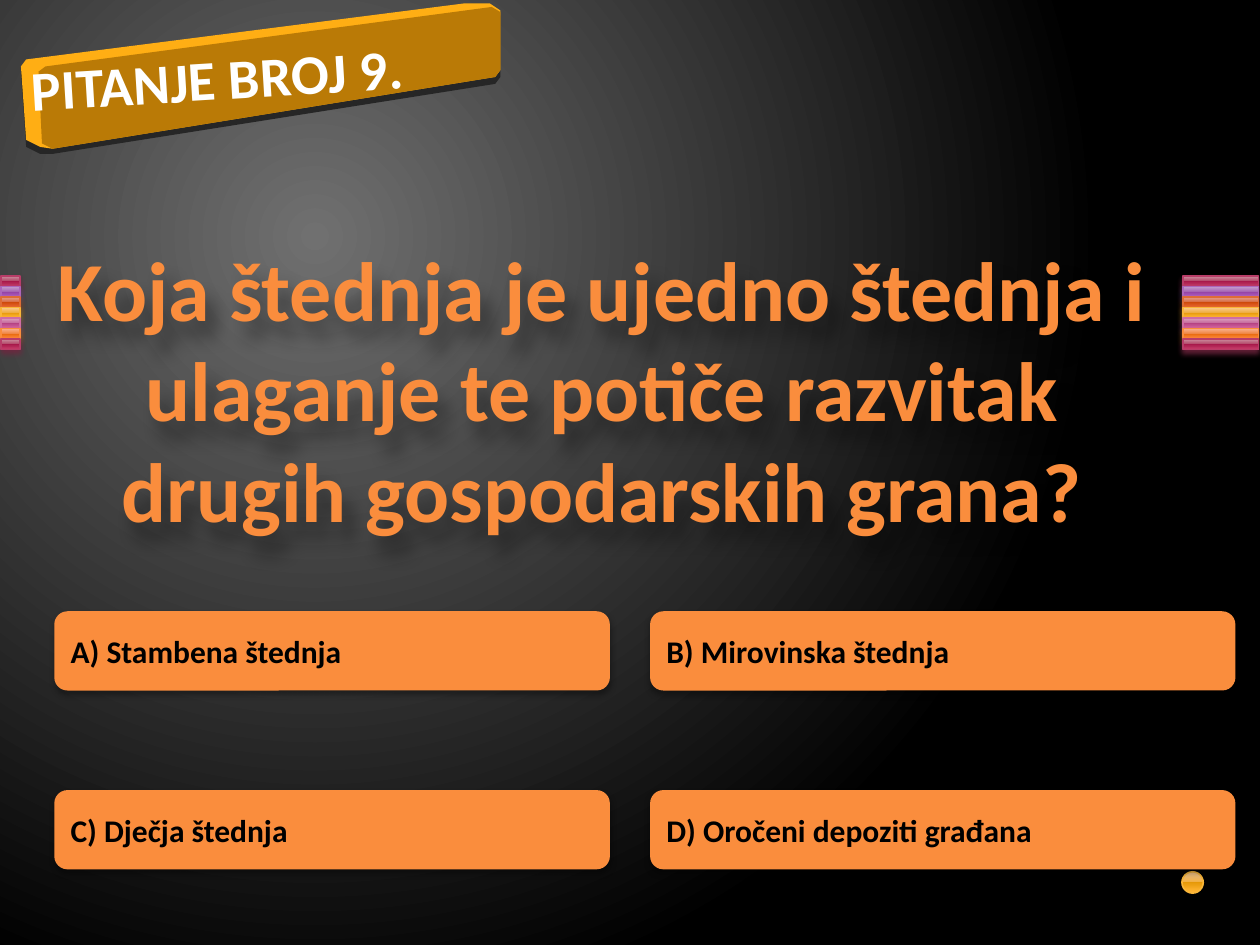
from lxml.etree import SubElement
from pptx import Presentation
from pptx.dml.color import RGBColor
from pptx.enum.shapes import MSO_SHAPE
from pptx.enum.text import MSO_ANCHOR, MSO_AUTO_SIZE, PP_ALIGN
from pptx.oxml.ns import qn
from pptx.util import Pt

THEME = {
    "font": "Calibri",
    "title_size": 48,
    "badge_size": 32,
    "answer_size": 18,
    "orange": "FA8D3D",
    "white": "FFFFFF",
    "black": "000000",
    "badge_face": "BA7A06",
    "badge_side": "FFAE14",
    "badge_base": "262626",
    "background": [(0, "707070"), (100, "000000")],
    # gradient colours, outline, shadow
    "plum": (["CE94A2", "B34869", "A61749", "C13764", "CA5D7C"], "B83D68", "722640"),
    "purple": (["C6A2D0", "A666B4", "8F3EA1", "AD5DBF", "BA76CA"], "AC66BB", "6A3F73"),
    "rust": (["E7A493", "D66B42", "CC4809", "E9642C", "F07B55"], "DE6C36", "894321"),
    "yellow": (["FBCC93", "EFAE43", "E59807", "FFB432", "FFBE5F"], "F9B639", "9A7023"),
    "pink": (["DDA4C1", "C66B9D", "B34181", "D361A0", "DC79AE"], "CF6DA4", "804365"),
    "coral": (["FBB494", "F08745", "E5670B", "FF8736", "FF9961"], "FA8D3D", "9A5726"),
}
GLOSS_POSITIONS = [0, 49, 49, 92, 100]


def write_text(shape, text, size, color, align=PP_ALIGN.LEFT, wrap=True):
    frame = shape.text_frame
    frame.word_wrap = wrap
    frame.auto_size = MSO_AUTO_SIZE.NONE
    frame.vertical_anchor = MSO_ANCHOR.MIDDLE
    paragraph = frame.paragraphs[0]
    paragraph.alignment = align
    run = paragraph.add_run()
    run.text = text
    run.font.name = THEME["font"]
    run.font.size = Pt(size)
    run.font.bold = True
    run.font.color.rgb = RGBColor.from_string(color)


def set_gradient(fill, element, stops):
    """Fill with a vertical gradient of (percent, colour) stops; return its XML."""
    fill.gradient()
    gradient = element.find(".//" + qn("a:gradFill"))
    stop_list = gradient.find(qn("a:gsLst"))
    stop_list.clear()
    for percent, color in stops:
        stop = SubElement(stop_list, qn("a:gs"), pos=str(percent * 1000))
        SubElement(stop, qn("a:srgbClr"), val=color)
    gradient.find(qn("a:lin")).set("ang", "5400000")
    return gradient


presentation = Presentation()
presentation.slide_width, presentation.slide_height = Pt(720), Pt(540)
slide = presentation.slides.add_slide(presentation.slide_layouts[5])
shapes = slide.shapes
shadows = []  # shape, colour, opacity, blur, distance, angle

# Background glow centred in the upper left quarter
glow = set_gradient(slide.background.fill, slide.element, THEME["background"])
glow.remove(glow.find(qn("a:lin")))
glow_path = SubElement(glow, qn("a:path"), {"path": "circle"})
SubElement(glow_path, qn("a:fillToRect"), l="50000", t="50000", r="100000", b="100000")

# Striped ribbons at both edges and the dot at the bottom
stripes = ["plum", "purple", "rust", "yellow", "pink", "coral", "plum"]
ornaments = [
    (MSO_SHAPE.RECTANGLE, name, left, 157.7 + 6 * row, width, 6)
    for left, width in [(0.7, 10.8), (676, 43.2)]
    for row, name in enumerate(stripes)
]
ornaments.append((MSO_SHAPE.OVAL, "yellow", 675.4, 498.2, 12.2, 12.2))
for kind, name, left, top, width, height in ornaments:
    colors, outline, shade = THEME[name]
    ornament = shapes.add_shape(kind, Pt(left), Pt(top), Pt(width), Pt(height))
    set_gradient(ornament.fill, ornament.element, zip(GLOSS_POSITIONS, colors))
    ornament.line.color.rgb = RGBColor.from_string(outline)
    ornament.line.width = Pt(0.9)
    ornament.shadow.inherit = False
    if kind == MSO_SHAPE.RECTANGLE:
        shadows.append((ornament, shade, 83, 3.1, 2, 90))

# Badge in perspective: base, side and face
body = [(12, 38), (15, 34), (265, 1.8), (280, 1.8), (285.5, 5.5), (285.5, 40),
        (283, 44), (30, 85), (23, 84), (15, 80)]
face = [(22.5, 41), (25.5, 37.5), (281, 4), (285.5, 7), (285.5, 40),
        (283, 44), (30, 85), (24.5, 82)]
for color, points, drop in [
    ("badge_base", body, 3.5), ("badge_side", body, 0), ("badge_face", face, 0),
]:
    corners = [(x, y + drop) for x, y in points]
    builder = shapes.build_freeform(*corners[0], scale=Pt(1))
    builder.add_line_segments(corners[1:], close=True)
    panel = builder.convert_to_shape()
    panel.fill.solid()
    panel.fill.fore_color.rgb = RGBColor.from_string(THEME[color])
    panel.line.fill.background()
    panel.shadow.inherit = False

badge_text = shapes.add_textbox(Pt(4), Pt(22), Pt(240), Pt(45))
badge_text.rotation = -3.5
write_text(badge_text, "PITANJE BROJ 9.", THEME["badge_size"], THEME["white"],
           align=PP_ALIGN.CENTER, wrap=False)

# Question
title = shapes.title
title.left, title.top, title.width, title.height = Pt(20), Pt(122.4), Pt(648), Pt(199)
write_text(title, "Koja štednja je ujedno štednja i ulaganje te potiče razvitak "
           "drugih gospodarskih grana?", THEME["title_size"], THEME["orange"],
           align=PP_ALIGN.CENTER)
title.shadow.inherit = False
shadows.append((title, THEME["black"], 40, 10, 12, 60))

# Answers, two by two
answers = [
    ["A) Stambena štednja", "B) Mirovinska štednja"],
    ["C) Dječja štednja", "D) Oročeni depoziti građana"],
]
columns = [(31, 317.5), (371.5, 334.5)]
for row, texts in enumerate(answers):
    for text, (left, width) in zip(texts, columns):
        answer = shapes.add_shape(MSO_SHAPE.ROUNDED_RECTANGLE, Pt(left),
                                  Pt(349.3 + 102.2 * row), Pt(width), Pt(45.3))
        answer.fill.solid()
        answer.fill.fore_color.rgb = RGBColor.from_string(THEME["orange"])
        answer.line.fill.background()
        answer.shadow.inherit = False
        write_text(answer, text, THEME["answer_size"], THEME["black"])
        shadows.append((answer, THEME["black"], 32, 3.5, 2.2, 90))

for shape, color, opacity, blur, distance, angle in shadows:
    effects = shape.element.find(".//" + qn("a:effectLst"))
    shadow = SubElement(effects, qn("a:outerShdw"), blurRad=str(Pt(blur)),
                        dist=str(Pt(distance)), dir=str(angle * 60000), rotWithShape="0")
    shade = SubElement(shadow, qn("a:srgbClr"), val=color)
    SubElement(shade, qn("a:alpha"), val=str(opacity * 1000))

presentation.save("out.pptx")
